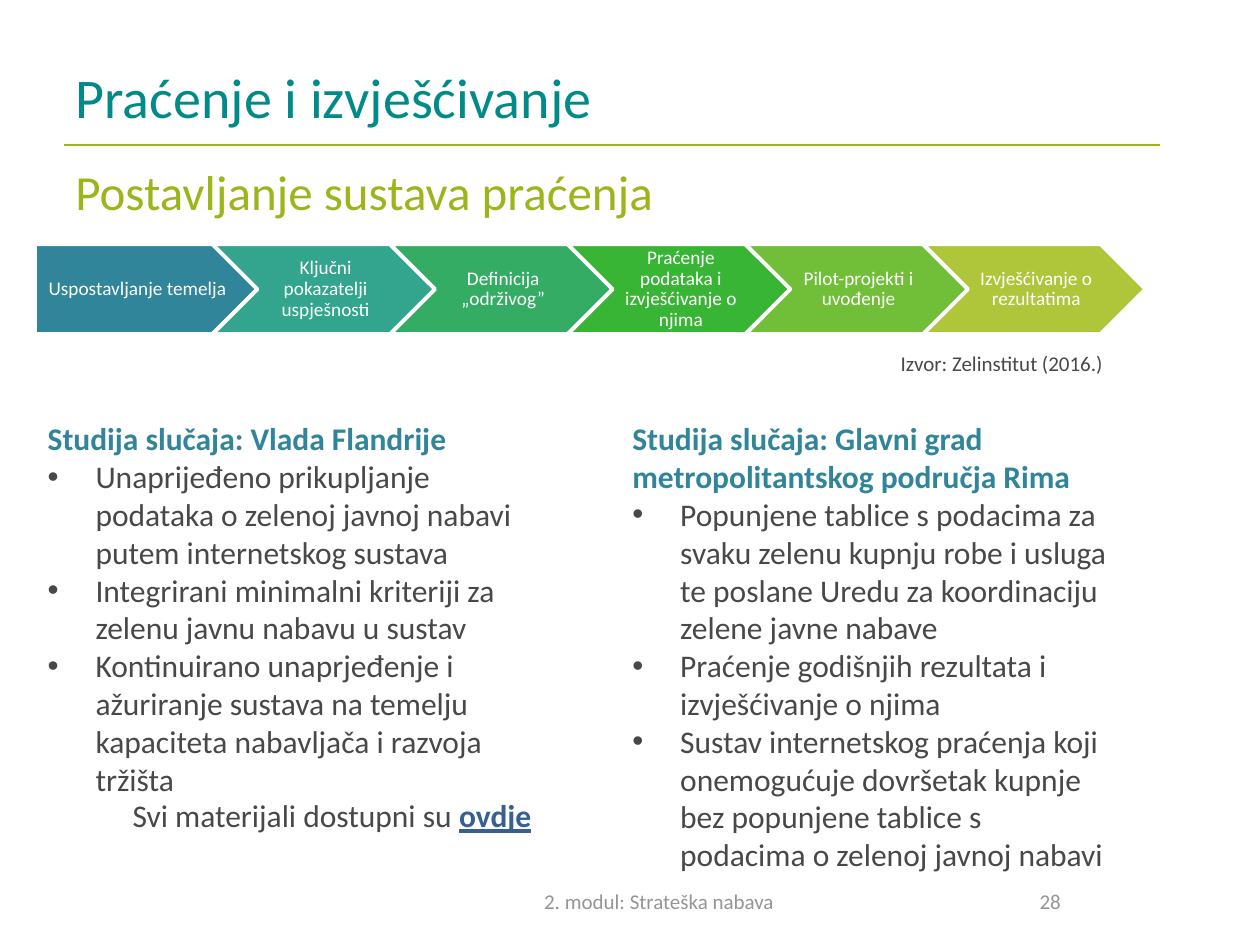
"""Builds the slide on monitoring and reporting."""
import pptx
import pptx.util
import pptx.dml.color
import pptx.enum.shapes
import pptx.enum.text
import pptx.oxml.ns
from lxml import etree

Inches, Pt = pptx.util.Inches, pptx.util.Pt
ALIGN = pptx.enum.text.PP_ALIGN
MIDDLE = pptx.enum.text.MSO_ANCHOR.MIDDLE
SHAPES = pptx.enum.shapes.MSO_SHAPE

COLORS = {
    "title": "008A88", "lime": "9BB51B", "heading": "31859B", "body": "484847",
    "footer": "959595", "link": "366092", "white": "FFFFFF",
}
TITLE = "Praćenje i izvješćivanje"
STEPS = [
    ("Uspostavljanje temelja", "31859B"),
    ("Ključni pokazatelji uspješnosti", "33A48D"),
    ("Definicija „održivog”", "35AC63"),
    ("Praćenje podataka i izvješćivanje o njima", "39B536"),
    ("Pilot-projekti i uvođenje", "71BE38"),
    ("Izvješćivanje o rezultatima", "AFC63A"),
]
CASES = [
    (0.28, 2.83, "Studija slučaja: Vlada Flandrije", [
        "Unaprijeđeno prikupljanje podataka o zelenoj javnoj nabavi putem internetskog sustava",
        "Integrirani minimalni kriteriji za zelenu javnu nabavu u sustav",
        "Kontinuirano unaprjeđenje i ažuriranje sustava na temelju kapaciteta nabavljača i razvoja tržišta",
    ]),
    (4.92, 3.43, "Studija slučaja: Glavni grad metropolitantskog područja Rima", [
        "Popunjene tablice s podacima za svaku zelenu kupnju robe i usluga te poslane Uredu za koordinaciju zelene javne nabave",
        "Praćenje godišnjih rezultata i izvješćivanje o njima",
        "Sustav internetskog praćenja koji onemogućuje dovršetak kupnje bez popunjene tablice s podacima o zelenoj javnoj nabavi",
    ]),
]
LABELS = [
    ("Postavljanje sustava praćenja", (0.5, 1.23, 8.74, 0.63), 28, "lime", ALIGN.LEFT, None),
    ("Izvor: Zelinstitut (2016.)", (7.05, 2.73, 1.96, 0.3), 12, "body", ALIGN.LEFT, None),
    ("2.\u00a0modul: Strateška nabava", (2.87, 6.95, 4.72, 0.4), 12, "footer", ALIGN.CENTER, MIDDLE),
    ("28", (7.17, 6.95, 2.33, 0.4), 12, "footer", ALIGN.CENTER, MIDDLE),
    ("Svi materijali dostupni su ", (0.35, 6.27, 4.57, 0.4), 18, "body", ALIGN.CENTER, None),
]
LINK_TEXT = "ovdje"
STEP_LEFT, STEP_TOP, STEP_WIDTH, STEP_HEIGHT, STEP_PITCH = 0.28, 1.94, 1.76, 0.71, 1.41


def rgb(value):
    return pptx.dml.color.RGBColor.from_string(value)


def style(run, size, color, bold=False):
    run.font.name = "Calibri"
    run.font.size = Pt(size)
    run.font.bold = bold
    run.font.color.rgb = rgb(COLORS[color])


def add_text_box(slide, box):
    frame = slide.shapes.add_textbox(*map(Inches, box)).text_frame
    frame.word_wrap = True
    return frame


def add_bullet(paragraph):
    properties = paragraph._p.get_or_add_pPr()
    properties.set("marL", str(Inches(0.38)))
    properties.set("indent", str(-Inches(0.38)))
    font = etree.SubElement(properties, pptx.oxml.ns.qn("a:buFont"))
    font.set("typeface", "Arial")
    bullet = etree.SubElement(properties, pptx.oxml.ns.qn("a:buChar"))
    bullet.set("char", "•")


def add_title(slide):
    title = slide.shapes.title
    title.left, title.top, title.width, title.height = map(Inches, (0.5, 0.3, 8.75, 0.93))
    title.text_frame.text = TITLE
    title.text_frame.vertical_anchor = MIDDLE
    paragraph = title.text_frame.paragraphs[0]
    paragraph.alignment = ALIGN.LEFT
    style(paragraph.runs[0], 32, "title")


def add_rule(slide):
    rule = slide.shapes.add_connector(
        pptx.enum.shapes.MSO_CONNECTOR.STRAIGHT, *map(Inches, (0.51, 1.15, 9.21, 1.15)))
    rule.line.color.rgb = rgb(COLORS["lime"])
    rule.line.width = Pt(0.75)
    etree.SubElement(rule._element.spPr, pptx.oxml.ns.qn("a:effectLst"))


def add_step(slide, index, text, color):
    kind = SHAPES.CHEVRON if index else SHAPES.PENTAGON
    box = (STEP_LEFT + index * STEP_PITCH, STEP_TOP, STEP_WIDTH, STEP_HEIGHT)
    step = slide.shapes.add_shape(kind, *map(Inches, box))
    step.shadow.inherit = False
    step.fill.solid()
    step.fill.fore_color.rgb = rgb(color)
    step.line.color.rgb = rgb(COLORS["white"])
    step.line.width = Pt(2)
    frame = step.text_frame
    frame.text = text
    frame.word_wrap = True
    frame.vertical_anchor = MIDDLE
    frame.margin_left = Inches(0.05 if index else 0.06)
    frame.margin_right = Inches(0.02)
    frame.margin_top = frame.margin_bottom = Inches(0.03)
    paragraph = frame.paragraphs[0]
    paragraph.alignment = ALIGN.CENTER
    paragraph.line_spacing = 0.9
    style(paragraph.runs[0], 11, "white")


def add_case(slide, left, height, heading, bullets):
    frame = add_text_box(slide, (left, 3.28, 4.02, height))
    frame.text = heading
    style(frame.paragraphs[0].runs[0], 18, "heading", True)
    for text in bullets:
        paragraph = frame.add_paragraph()
        add_bullet(paragraph)
        paragraph.text = text
        style(paragraph.runs[0], 18, "body")


def add_label(slide, text, box, size, color, alignment, anchor):
    frame = add_text_box(slide, box)
    frame.text = text
    frame.vertical_anchor = anchor
    paragraph = frame.paragraphs[0]
    paragraph.alignment = alignment
    style(paragraph.runs[0], size, color)
    return paragraph


def main():
    presentation = pptx.Presentation()
    presentation.slide_width, presentation.slide_height = Inches(10), Inches(7.5)
    slide = presentation.slides.add_slide(presentation.slide_layouts[5])
    add_title(slide)
    add_rule(slide)
    for index, (text, color) in enumerate(STEPS):
        add_step(slide, index, text, color)
    for case in CASES:
        add_case(slide, *case)
    paragraphs = [add_label(slide, *label) for label in LABELS]
    link = paragraphs[-1].add_run()
    link.text = LINK_TEXT
    style(link, 18, "link", True)
    link.font.underline = True
    presentation.save("out.pptx")


if __name__ == "__main__":
    main()
